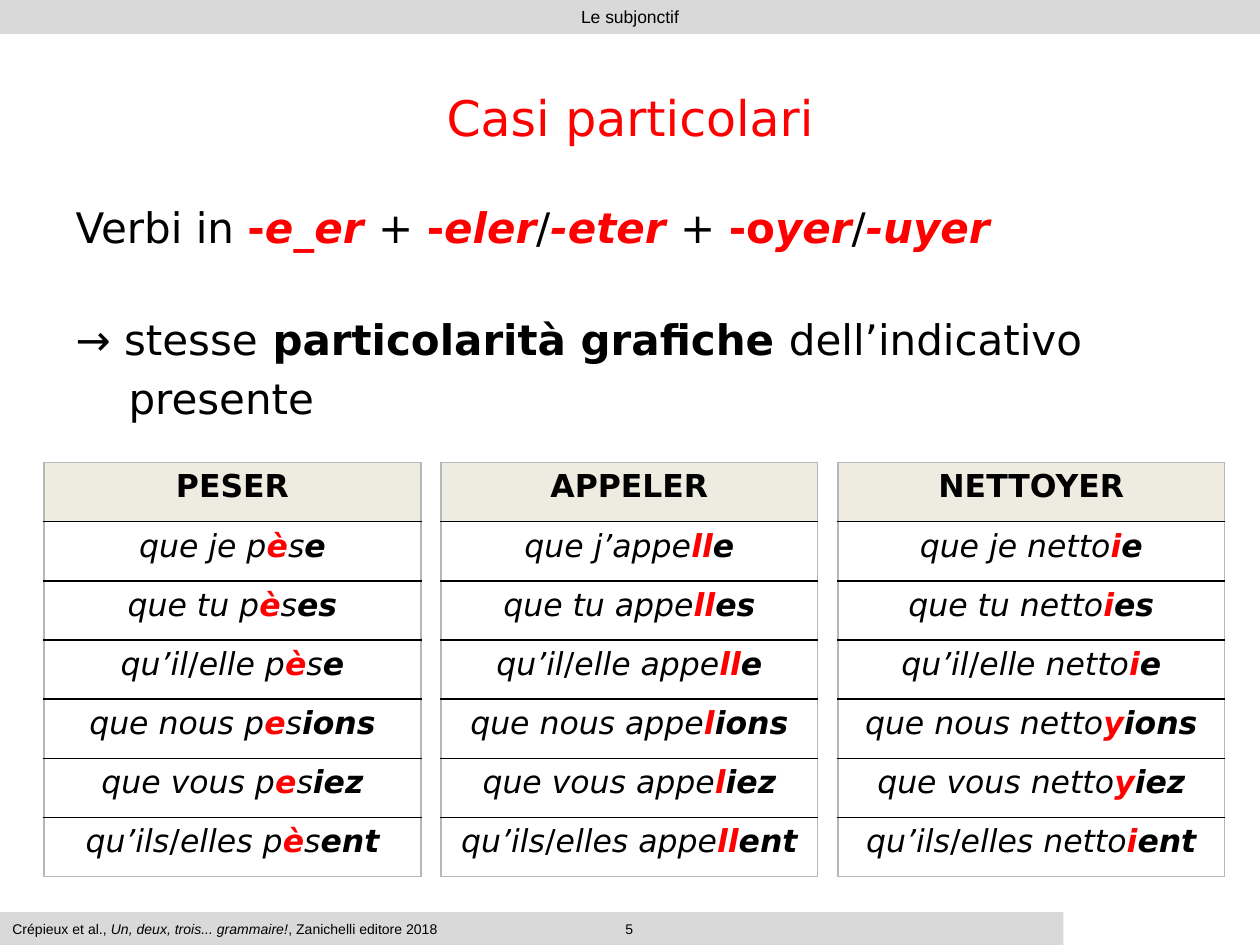
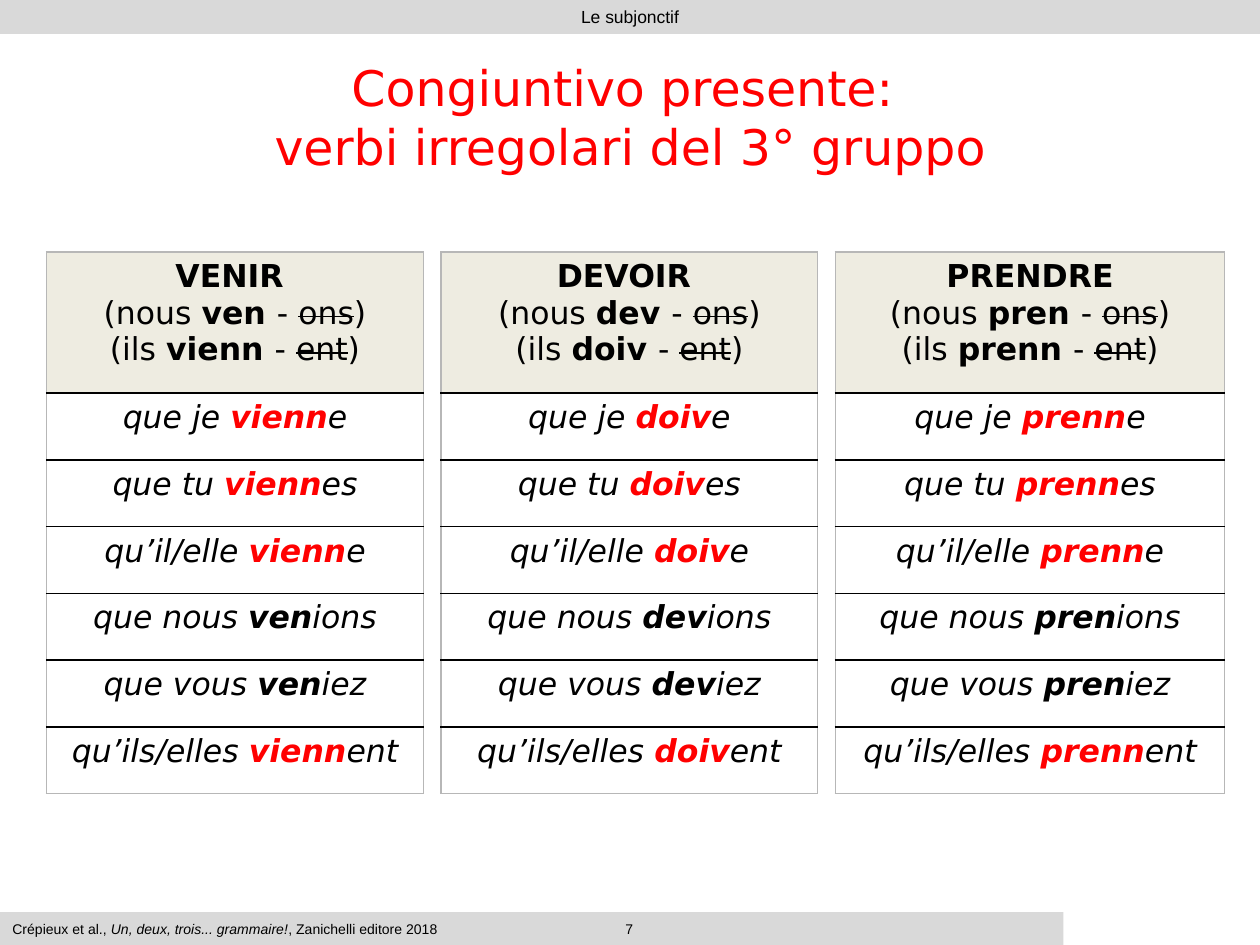
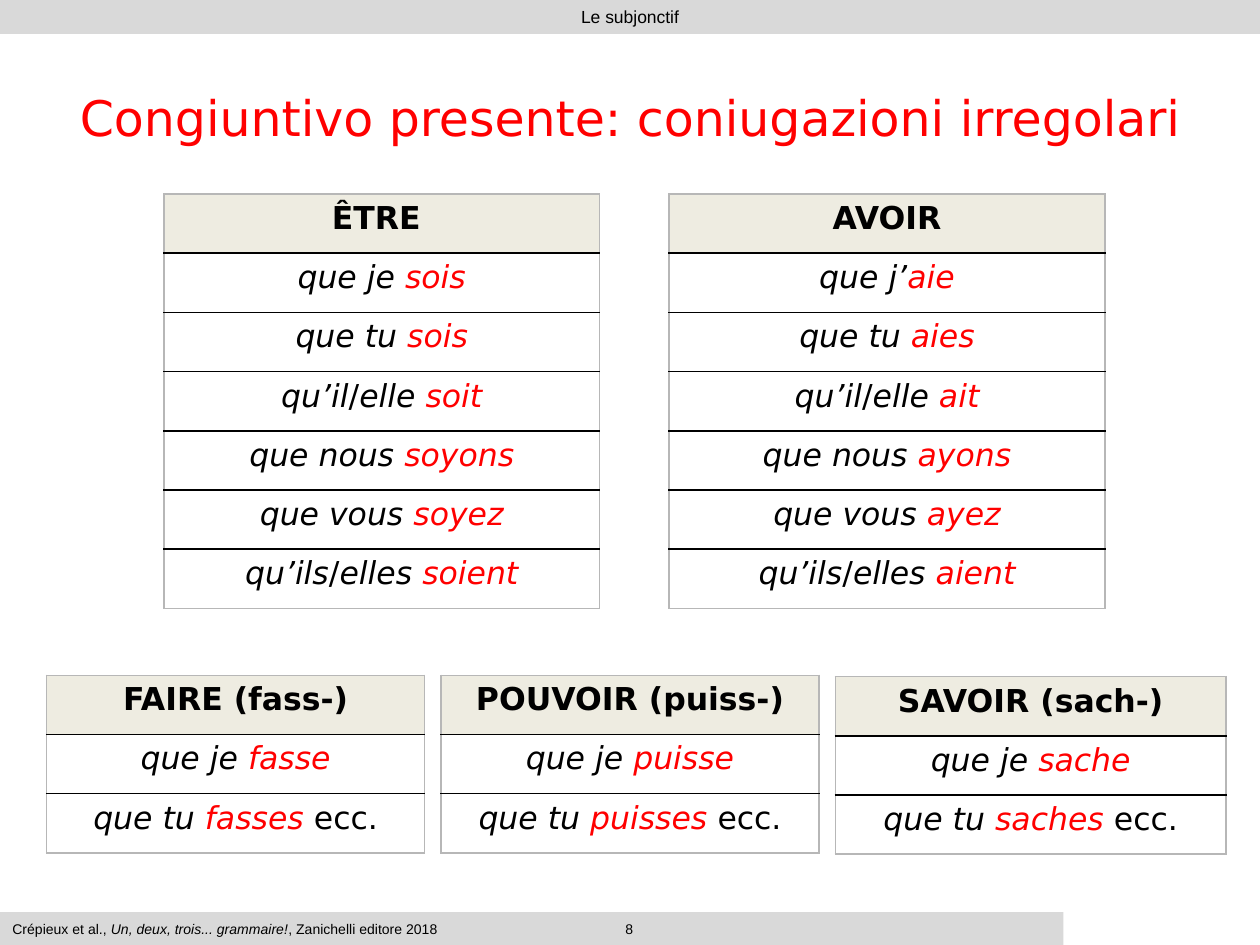
"""Build three slides on the French present subjunctive."""
import lxml.etree
import pptx
import pptx.dml.color
import pptx.enum.shapes
import pptx.enum.text
import pptx.oxml.ns
import pptx.util

inch, point = pptx.util.Inches, pptx.util.Pt
hue = pptx.dml.color.RGBColor.from_string
tag = pptx.oxml.ns.qn
align, anchor = pptx.enum.text.PP_ALIGN, pptx.enum.text.MSO_ANCHOR
RED, BLACK, GREY, CREAM, EDGE = "FF0000", "000000", "D9D9D9", "EEECE1", "B7B7B7"
SANS, ARIAL = "DejaVu Sans", "Arial"


def put(frame, text, size, face=SANS, side=align.CENTER):
    """Write 'code|text|code|text' lines; codes: r red, b bold, i italic, s struck."""
    frame.word_wrap = True
    frame.auto_size = pptx.enum.text.MSO_AUTO_SIZE.NONE
    for row, line in enumerate(text.split("\n")):
        par = frame.add_paragraph() if row else frame.paragraphs[0]
        par.alignment = side
        par.space_before = point(0)
        bits = line.split("|")
        for code, words in zip(bits[::2], bits[1::2]):
            for turn, part in enumerate(words.split("\v")):
                if turn:
                    par.add_line_break()
                if not part:
                    continue
                run = par.add_run()
                run.text = part
                look = {"name": face, "size": point(size), "bold": "b" in code, "italic": "i" in code}
                for key, value in look.items():
                    setattr(run.font, key, value)
                run.font.color.rgb = hue(RED if "r" in code else BLACK)
                if "s" in code:
                    run._r.get_or_add_rPr().set("strike", "sngStrike")


def line(cell, side, color):
    """Give one side of a cell a line."""
    props = cell._tc.get_or_add_tcPr()
    edge = lxml.etree.Element(tag("a:" + side), w=str(point(1)))
    fill = lxml.etree.SubElement(edge, tag("a:solidFill"))
    lxml.etree.SubElement(fill, tag("a:srgbClr"), val=color)
    props.insert(["lnL", "lnR", "lnT", "lnB"].index(side), edge)


who = ["que je ", "que tu ", "qu’il/elle ", "que nous ", "que vous ", "qu’ils/elles "]
split = [text.replace("/", "||/|i|") for text in who]
ends = ["e", "es", "e", "ions", "iez", "ent"]
plural = (3, 4)

# Each table: left, top, width, head height, row height, cells
cases = []
verbs = [("PESER", "p", "è", "e", "s"), ("APPELER", "appe", "ll", "l", ""),
         ("NETTOYER", "netto", "i", "y", "")]
for col, (name, stem, strong, weak, tail) in enumerate(verbs):
    cells = [f"b|{name}"]
    for num, end in enumerate(ends):
        mark = weak if num in plural else strong
        text = f"i|{split[num]}{stem}|irb|{mark}|i|{tail}|ib|{end}"
        cells.append(text.replace("je a", "j’a"))
    cases.append((0.35 + 3.15 * col, 3.67, 3.07 if col == 2 else 2.99, 0.47, 0.47, cells))

third = []
verbs = [("VENIR ", "ven", "vienn", "\n"), ("DEVOIR ", "dev", "doiv", "\n"),
         ("PRENDRE", "pren", "prenn", "\v|")]
for col, (name, weak, strong, gap) in enumerate(verbs):
    cells = [f"b|{name}{gap}|(nous |b|{weak} ||- |s|ons||)\v(ils |b|{strong} ||- |s|ent||)"]
    for num, end in enumerate(ends):
        stem = f"ib|{weak}" if num in plural else f"irb|{strong}"
        cells.append(f"i|{who[num]}|{stem}|i|{end}")
    third.append((0.37 + 3.13 * col, 2, 3.09 if col == 2 else 2.99, 1.12, 0.53, cells))

odd = []
verbs = [("ÊTRE ", "sois sois soit soyons soyez soient"),
         ("AVOIR", "aie aies ait ayons ayez aient")]
for col, (name, forms) in enumerate(verbs):
    cells = [f"b|{name}"]
    for start, form in zip(split, forms.split()):
        cells.append(f"i|{start}|ir|{form}".replace("je |ir|a", "j’|ir|a"))
    odd.append((1.3 + 4.01 * col, 1.54, 3.46, 0.47, 0.47, cells))
verbs = [("FAIRE", "fass"), ("POUVOIR", "puiss"), ("SAVOIR", "sach")]
for col, (name, stem) in enumerate(verbs):
    cells = [f"b|{name} ({stem}-)", f"i|que je |ir|{stem}e", f"i|que tu |ir|{stem}es ||ecc."]
    odd.append((0.37 + 3.13 * col, 5.37 if col == 2 else 5.36,
                3.1 if col == 2 else 3, 0.47, 0.47, cells))

intro = ("|Verbi in |rb|-|rbi|e|rb|_|rbi|er ||+ |rb|-|rbi|eler||/|rbi|-eter ||+ "
         "|rb|-o|rbi|yer||/|rbi|-uyer\n"
         "|→ stesse|b| particolarità grafiche ||dell’indicativo\n"
         "|presente")
sheets = [(5, "Casi particolari", intro, cases),
          (7, "Congiuntivo presente: \vverbi irregolari del 3° gruppo", "", third),
          (8, "Congiuntivo presente: coniugazioni irregolari", "", odd)]

deck = pptx.Presentation()
deck.slide_width, deck.slide_height = inch(10), inch(7.5)

for page, title, body, tables in sheets:
    slide = deck.slides.add_slide(deck.slide_layouts[1 if body else 5])
    bands = [(0, 0, 10, 0.27, "|Le subjonctif", 10, align.CENTER),
             (0, 7.24, 8.44, 0.26, "|Crépieux et al., |i|Un, deux, trois... grammaire!"
              "||, Zanichelli editore 2018", 8, align.LEFT),
             (3.86, 7.24, 2.27, 0.26, f"|{page}", 8, align.CENTER)]
    for left, top, wide, high, text, size, side in bands:
        band = slide.shapes.add_shape(pptx.enum.shapes.MSO_SHAPE.RECTANGLE,
                                      *map(inch, (left, top, wide, high)))
        band.shadow.inherit = False
        band.fill.solid()
        band.fill.fore_color.rgb = hue(GREY)
        band.line.fill.background()
        band.text_frame.vertical_anchor = anchor.MIDDLE
        put(band.text_frame, text, size, ARIAL, side)

    head = slide.shapes.title
    head.left, head.top, head.width, head.height = map(inch, (0.5, 0.3, 9, 1.25))
    head.text_frame.vertical_anchor = anchor.MIDDLE
    put(head.text_frame, f"r|{title}", 28)

    if body:
        main = slide.placeholders[1]
        main.left, main.top, main.width, main.height = map(inch, (0.5, 1.55, 9, 5.15))
        put(main.text_frame, body, 24, side=align.LEFT)
        for par, gap, inset in zip(main.text_frame.paragraphs, (0, 35, 5), (0, 0, 0.42)):
            par.space_before = point(gap)
            props = par._p.get_or_add_pPr()
            props.set("marL", str(inch(inset)))
            props.set("indent", "0")
            lxml.etree.SubElement(props, tag("a:buNone"))

    for left, top, wide, first, step, cells in tables:
        last = len(cells) - 1
        grid = slide.shapes.add_table(last + 1, 1, *map(
            inch, (left, top, wide, first + step * last))).table
        grid.first_row = grid.horz_banding = False
        for row, text in enumerate(cells):
            grid.rows[row].height = inch(step if row else first)
            cell = grid.cell(row, 0)
            if row:
                cell.fill.background()
            else:
                cell.fill.solid()
                cell.fill.fore_color.rgb = hue(CREAM)
            put(cell.text_frame, text, 18)
            line(cell, "lnL", EDGE)
            line(cell, "lnR", EDGE)
            line(cell, "lnT", BLACK if row else EDGE)
            line(cell, "lnB", BLACK if row < last else EDGE)

deck.save("out.pptx")
